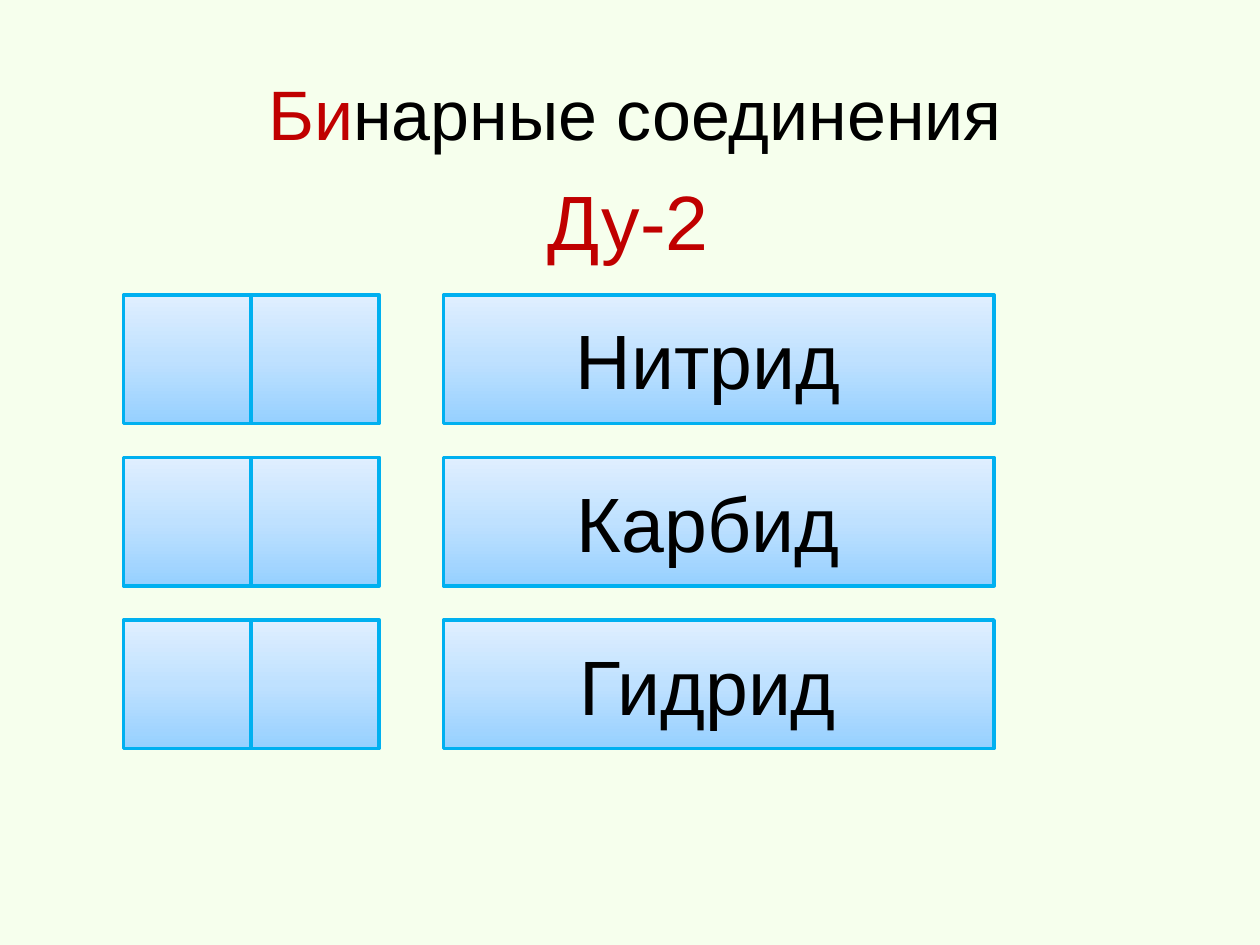
from copy import deepcopy

from pptx import Presentation
from pptx.dml.color import RGBColor
from pptx.enum import shapes, text
from pptx.util import Inches, Pt

# Content
TITLE = [("Би", "red"), ("нарные соединения", "black")]
SUBTITLE = [("Ду-2", "red")]
COMPOUNDS = ["Нитрид ", "Карбид ", "Гидрид "]

COLORS = {"background": "F6FFED", "red": "C00000", "black": "000000",
          "line": "00B0F0"}
GRADIENT = [(0, "96D0FF"), (0.5, "BFE1FF"), (1, "E0EFFF")]  # bottom to top

# Layout in inches
TOP, ROW_STEP = 2.34, 1.29
CELL, CELL_LEFT = 1.02, 0.98
CELL_STEP = 1.01
NAME_LEFT, NAME_WIDTH = 3.52, 4.37


def color(name):
    return RGBColor.from_string(COLORS[name])


def write(shape, runs, size, align=None):
    tf = shape.text_frame
    tf.vertical_anchor = text.MSO_ANCHOR.MIDDLE
    p = tf.paragraphs[0]
    p.alignment = align
    p.font.name, p.font.size = "Arial", Pt(size)
    for words, name in runs:
        r = p.add_run()
        r.text = words
        r.font.color.rgb = color(name)
    return tf


def add_box(slide, left, top, width):
    sp = slide.shapes.add_shape(shapes.MSO_SHAPE.RECTANGLE, Inches(left),
                                Inches(top), Inches(width), Inches(CELL))
    sp.shadow.inherit = False
    sp.line.color.rgb = color("line")
    sp.line.width = Pt(2)
    sp.fill.gradient()
    sp.fill.gradient_angle = 90
    # The default gradient has two stops; add the middle one
    first = sp._element.spPr.xpath(".//a:gs")[0]
    first.addnext(deepcopy(first))
    for stop, (position, rgb) in zip(sp.fill.gradient_stops, GRADIENT):
        stop.position = position
        stop.color.rgb = RGBColor.from_string(rgb)
    return sp


def main():
    prs = Presentation()
    prs.slide_width, prs.slide_height = Inches(10), Inches(7.5)
    slide = prs.slides.add_slide(prs.slide_layouts[6])
    fill = slide.background.fill
    fill.solid()
    fill.fore_color.rgb = color("background")

    # Headings
    title = slide.shapes.add_textbox(Inches(1.25), Inches(0.23),
                                     Inches(7.58), Inches(1.33))
    write(title, TITLE, 40, text.PP_ALIGN.CENTER).word_wrap = True
    subtitle = slide.shapes.add_textbox(Inches(4.25), Inches(1.33),
                                        Inches(1.5), Inches(0.84))
    tf = write(subtitle, SUBTITLE, 44)
    tf.vertical_anchor = text.MSO_ANCHOR.TOP
    tf.word_wrap = False
    tf.auto_size = text.MSO_AUTO_SIZE.SHAPE_TO_FIT_TEXT

    # One row per compound: two empty cells and the name
    for row, compound in enumerate(COMPOUNDS):
        top = TOP + row * ROW_STEP
        for col in range(2):
            add_box(slide, CELL_LEFT + col * CELL_STEP, top, CELL)
        name_box = add_box(slide, NAME_LEFT, top, NAME_WIDTH)
        write(name_box, [(compound, "black")], 44, text.PP_ALIGN.CENTER)

    prs.save("out.pptx")


if __name__ == "__main__":
    main()
